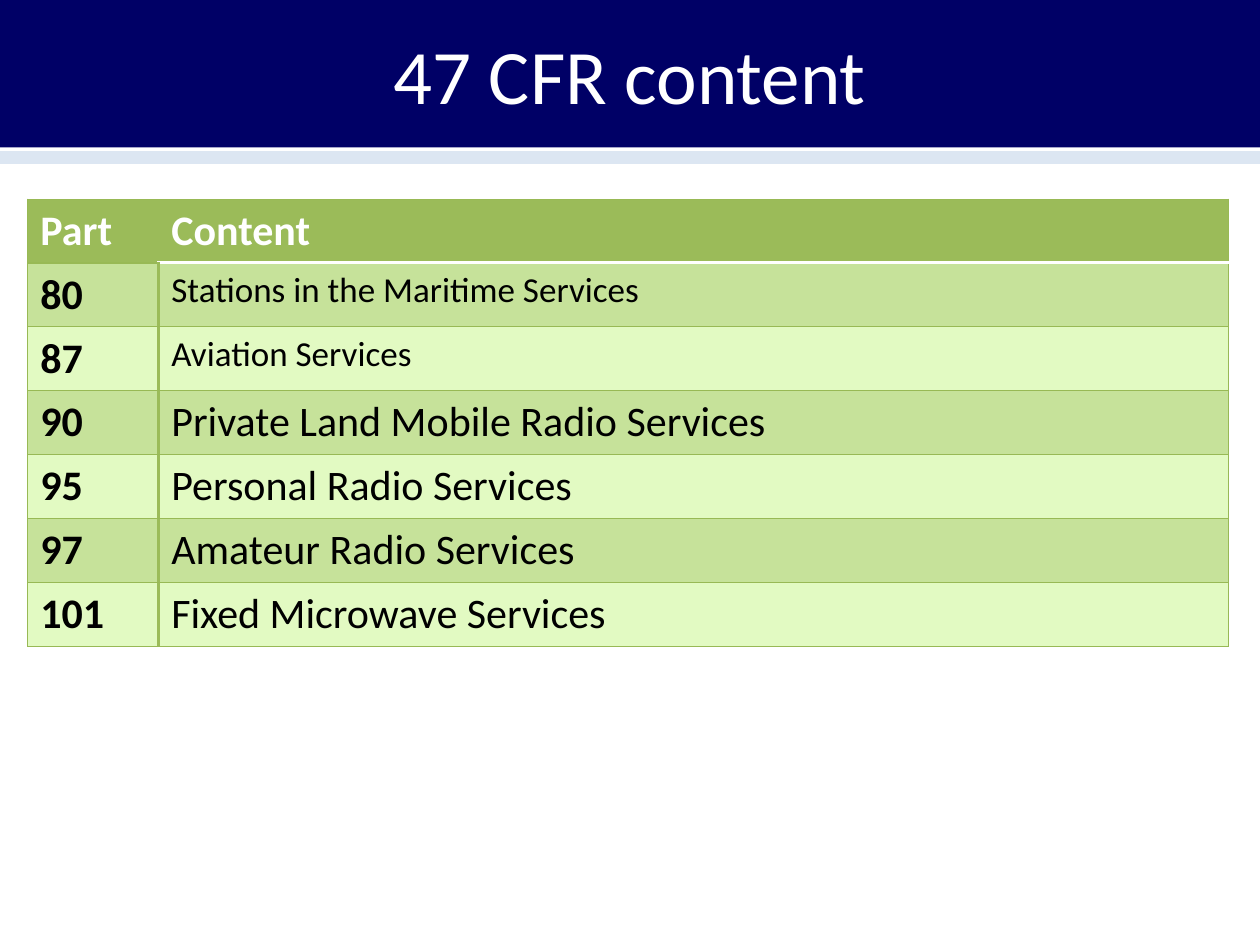
from lxml import etree
from pptx import Presentation
from pptx.dml.color import RGBColor
from pptx.enum import shapes, text
from pptx.oxml import ns
from pptx.util import Inches, Pt

# Content
TITLE = "47 CFR content"
HEADER = ("Part", "Content")
ROWS = [  # part, content, size of the content text
    ("80", "Stations in the Maritime Services", 20),
    ("87", "Aviation Services", 20),
    ("90", "Private Land Mobile Radio Services", 24),
    ("95", "Personal Radio Services", 24),
    ("97", "Amateur Radio Services", 24),
    ("101", "Fixed Microwave Services", 24),
]

# Style
FONT = "Calibri"
NAVY = RGBColor(0x00, 0x00, 0x66)
PALE_BLUE = RGBColor(0xDC, 0xE6, 0xF2)
WHITE = RGBColor(0xFF, 0xFF, 0xFF)
BLACK = RGBColor(0x00, 0x00, 0x00)
GREEN = RGBColor(0x9B, 0xBB, 0x59)
EDGE = RGBColor(0x98, 0xB9, 0x55)
BANDS = (RGBColor(0xC6, 0xE2, 0x9A), RGBColor(0xE2, 0xFA, 0xC2))
COL_WIDTHS = (1.04, 8.49)
ROW_HEIGHT = 0.5


def write(tf, words, size=24, color=BLACK, bold=False, align=None):
    p = tf.paragraphs[0]
    p.alignment = align
    r = p.add_run()
    r.text = words
    r.font.name = FONT
    r.font.size = Pt(size)
    r.font.bold = bold
    r.font.color.rgb = color


def set_borders(cell, **sides):
    """Draw the sides L, R, T and B, each a (colour, points) pair or None."""
    tcPr = cell._tc.get_or_add_tcPr()
    for side in "LRTB":
        ln = etree.SubElement(tcPr, ns.qn(f"a:ln{side}"))
        if sides.get(side) is None:
            etree.SubElement(ln, ns.qn("a:noFill"))
            continue
        color, width = sides[side]
        ln.set("w", str(Pt(width)))
        fill = etree.SubElement(ln, ns.qn("a:solidFill"))
        etree.SubElement(fill, ns.qn("a:srgbClr"), val=str(color))


prs = Presentation()
prs.slide_width, prs.slide_height = Inches(10), Inches(7.5)
s = prs.slides.add_slide(prs.slide_layouts[5])

# Title band and rule, placed behind the title
band = s.shapes.add_shape(shapes.MSO_SHAPE.RECTANGLE, 0, 0, Inches(10), Inches(1.17))
band.shadow.inherit = False
band.fill.solid()
band.fill.fore_color.rgb = NAVY
band.line.fill.background()

rule = s.shapes.add_connector(
    shapes.MSO_CONNECTOR.STRAIGHT, 0, Inches(1.25), Inches(10), Inches(1.25))
rule.line.color.rgb = PALE_BLUE
rule.line.width = Pt(8)
etree.SubElement(rule._element.spPr, ns.qn("a:effectLst"))

title = s.shapes.title
title._element.addprevious(band._element)
title._element.addprevious(rule._element)
title.left, title.top = Inches(0.5), Inches(-0.04)
title.width, title.height = Inches(9), Inches(1.25)
title.text_frame.vertical_anchor = text.MSO_ANCHOR.MIDDLE
write(title.text_frame, TITLE, size=44, color=WHITE, align=text.PP_ALIGN.CENTER)

# Table
n_rows = len(ROWS) + 1
table = s.shapes.add_table(
    n_rows, 2, Inches(0.22), Inches(1.58),
    Inches(sum(COL_WIDTHS)), Inches(n_rows * ROW_HEIGHT)).table
for column, width in zip(table.columns, COL_WIDTHS):
    column.width = Inches(width)
for row in table.rows:
    row.height = Inches(ROW_HEIGHT)

thin, divider, header_rule = (EDGE, 0.75), (GREEN, 2), (WHITE, 2)
for i, (part, content, size) in enumerate([(*HEADER, 24)] + ROWS):
    is_header = i == 0
    color = WHITE if is_header else BLACK
    middle = None if is_header else divider
    left, right = table.cell(i, 0), table.cell(i, 1)
    write(left.text_frame, part, color=color, bold=True)
    write(right.text_frame, content, size=size, color=color, bold=is_header)
    set_borders(left, L=thin, R=middle, T=thin, B=thin)
    set_borders(right, L=middle, R=thin,
                T=header_rule if i == 1 else thin,
                B=header_rule if is_header else thin)
    for cell in (left, right):
        cell.fill.solid()
        cell.fill.fore_color.rgb = GREEN if is_header else BANDS[(i - 1) % 2]

prs.save("out.pptx")
